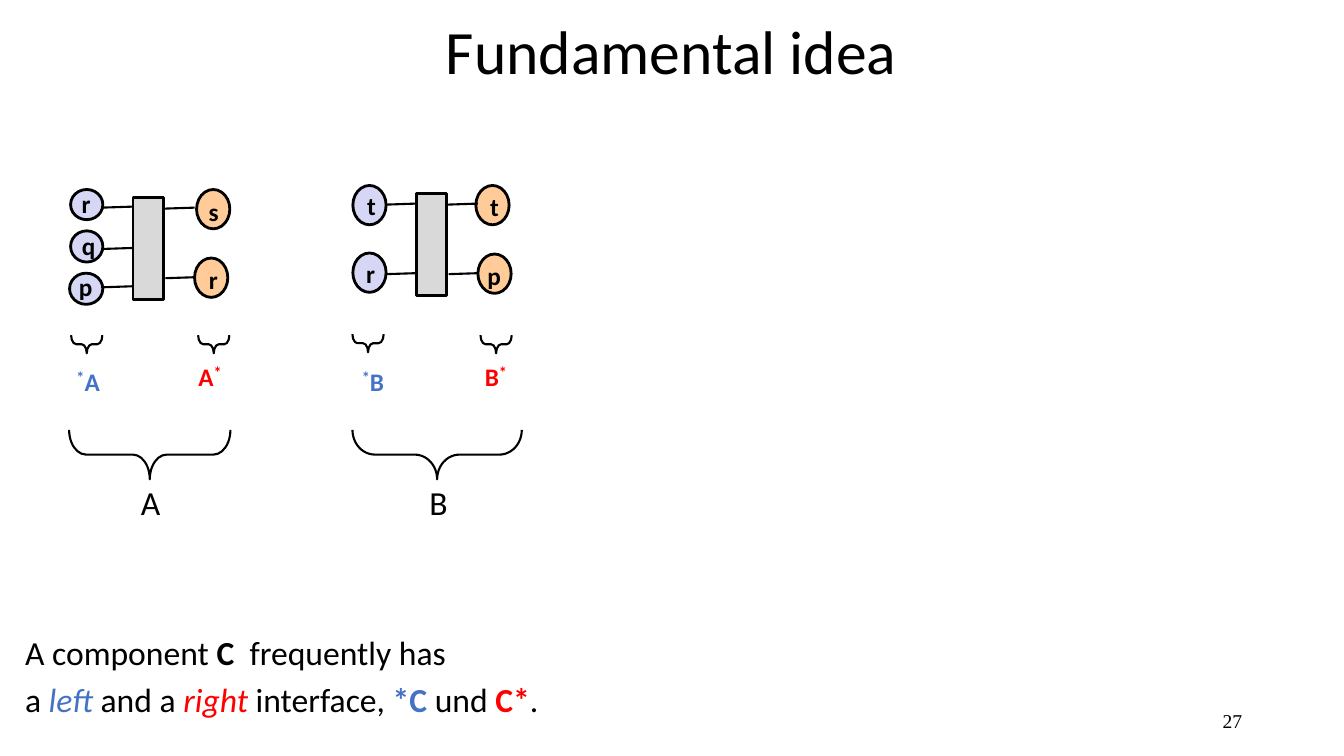
"""Build the slide on components with a left and a right interface."""
from lxml.etree import SubElement
from pptx import Presentation
from pptx.dml.color import RGBColor as RGB
from pptx.enum.shapes import MSO_CONNECTOR as LINK, MSO_SHAPE as SHAPE
from pptx.enum.text import MSO_ANCHOR as ANCHOR, PP_ALIGN as ALIGN
from pptx.oxml.ns import qn
from pptx.util import Inches, Pt

HUES = {"ink": "000000", "left": "4472C4", "right": "FF0000",
        "lilac": "D6D6F5", "peach": "FFCC99", "gray": "D9D9D9"}

deck = Presentation()
deck.slide_width, deck.slide_height = Inches(13.33), Inches(7.5)
slide = deck.slides.add_slide(deck.slide_layouts[5])
parts = slide.shapes


def write(lines, at, box=None, wrap=True, align=ALIGN.LEFT,
          anchor=ANCHOR.TOP, gap=0, **style):
    """Write lines of (text, format) runs in a box."""
    place = [Inches(v) for v in at]
    box = box or parts.add_textbox(*place)
    box.left, box.top, box.width, box.height = place
    frame = box.text_frame
    frame.word_wrap, frame.vertical_anchor = wrap, anchor
    for i, line in enumerate(lines):
        para = frame.add_paragraph() if i else frame.paragraphs[0]
        para.alignment, para.space_before = align, Pt(gap)
        for text, extra in line:
            look = {"size": 18, "face": "Calibri", "hue": "ink", **style, **extra}
            run = para.add_run()
            run.text = text
            font = run.font
            font.size, font.name = Pt(look["size"]), look["face"]
            font.bold = look.get("bold", False)
            font.italic = look.get("italic", False)
            font.color.rgb = RGB.from_string(HUES[look["hue"]])
            if "lift" in look:
                run._r.get_or_add_rPr().set("baseline", str(look["lift"] * 1000))


def draw(kind, at, fill=None, width=2):
    """Draw a black-edged shape."""
    shape = parts.add_shape(kind, *[Inches(v) for v in at])
    shape.shadow.inherit = False
    if fill:
        shape.fill.solid()
        shape.fill.fore_color.rgb = RGB.from_string(HUES[fill])
    else:
        shape.fill.background()
    shape.line.color.rgb = RGB.from_string(HUES["ink"])
    shape.line.width = Pt(width)
    return shape


write([[("Fundamental idea", {})]], (1.78, 0.02, 9.76, 0.94), parts.title,
      align=ALIGN.CENTER, anchor=ANCHOR.MIDDLE, gap=8.8, size=44)
write([[("27", {})]], (9.42, 6.95, 3, 0.4), align=ALIGN.RIGHT,
      anchor=ANCHOR.MIDDLE, size=14, face="Times New Roman")

for body in [(1.32, 1.96, 0.3, 1.01), (4.13, 1.92, 0.3, 1.01)]:
    draw(SHAPE.RECTANGLE, body, "gray")

ports = [
    ("r", "lilac", (0.7, 1.88, 0.32, 0.3), (0.71, 1.82, 0.29), (1.01, 2.06)),
    ("q", "lilac", (0.7, 2.29, 0.32, 0.31), (0.71, 2.24, 0.34), (1.02, 2.47)),
    ("p", "lilac", (0.69, 2.71, 0.33, 0.31), (0.68, 2.64, 0.34), (1.02, 2.85)),
    ("s", "peach", (1.95, 1.88, 0.33, 0.39), (1.97, 1.9, 0.3), (1.63, 2.07)),
    ("r", "peach", (1.93, 2.56, 0.33, 0.39), (1.97, 2.57, 0.29), (1.64, 2.76)),
    ("t", "lilac", (3.5, 1.84, 0.33, 0.39), (3.54, 1.84, 0.29), (3.83, 2.03)),
    ("r", "lilac", (3.5, 2.51, 0.33, 0.39), (3.53, 2.51, 0.29), (3.83, 2.72)),
    ("t", "peach", (4.72, 1.84, 0.33, 0.39), (4.76, 1.85, 0.29), (4.44, 2.03)),
    ("p", "peach", (4.74, 2.52, 0.33, 0.39), (4.73, 2.53, 0.34), (4.45, 2.72)),
]
for name, fill, oval, spot, (x, y) in ports:
    draw(SHAPE.OVAL, oval, fill)
    wire = parts.add_connector(LINK.STRAIGHT, Inches(x), Inches(y),
                               Inches(x + 0.3), Inches(y - 0.01))
    wire.line.color.rgb = RGB.from_string(HUES["ink"])
    wire.line.width = Pt(1.5)
    SubElement(wire._element.spPr, qn("a:effectLst"))
    write([[(name, {})]], (*spot, 0.4), wrap=False, align=ALIGN.CENTER, bold=True)

braces = [
    ((0.77, 3.26, 0.18, 0.31), 0.28), ((2.03, 3.26, 0.18, 0.31), 0.28),
    ((3.56, 3.25, 0.18, 0.31), 0.28), ((4.83, 3.26, 0.18, 0.31), 0.28),
    ((1.24, 3.71, 0.49, 1.6), 0.343), ((4.09, 3.67, 0.49, 1.68), 0.454),
]
for at, bend in braces:
    brace = draw(SHAPE.RIGHT_BRACE, at, width=1.5)
    brace.rotation = 90
    brace.adjustments[0], brace.adjustments[1] = bend, 0.5

star = ("*", {"size": 20, "lift": 30})
for name, left, right, mid in [("A", 0.66, 1.87, 1.3), ("B", 3.49, 4.71, 4.16)]:
    tag = (name, {})
    write([[star, tag]], (left, 3.56, 0.58, 0.4), hue="left", bold=True)
    write([[tag, star]], (right, 3.51, 0.56, 0.44), hue="right", bold=True)
    write([[tag]], (mid, 4.73, 0.51, 0.51), size=24)

write([
    [("A component ", {}), ("C", {"bold": True}), ("  frequently has", {})],
    [("a ", {}), ("left ", {"hue": "left", "italic": True}), ("and a ", {}),
     ("right", {"hue": "right", "italic": True}), (" interface, ", {}),
     ("*C ", {"hue": "left", "bold": True}), ("und ", {}),
     ("C*", {"hue": "right", "bold": True}), (".", {})],
], (0.15, 6.22, 6.58, 1.09), gap=4.8, size=24)

deck.save("out.pptx")
